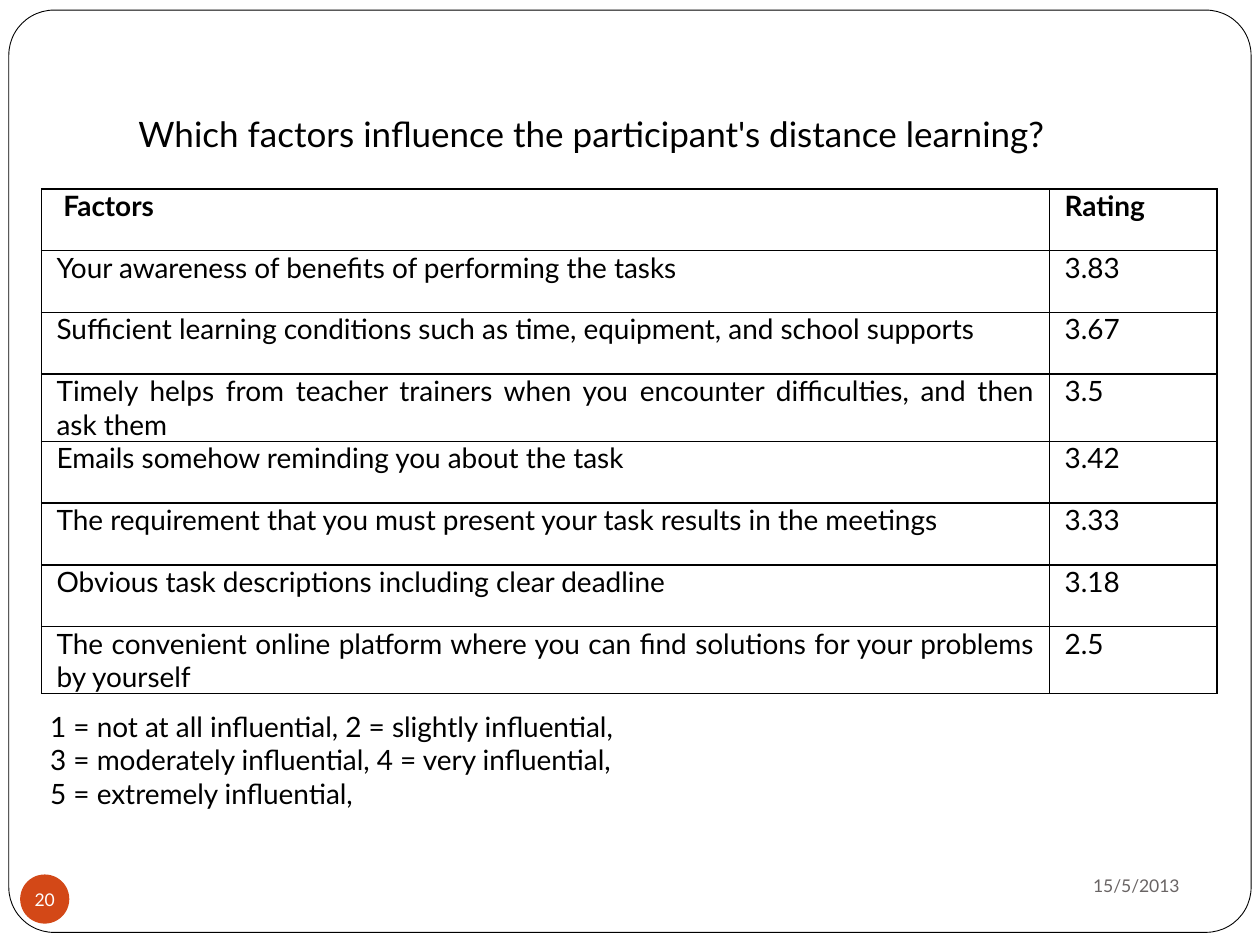
from dataclasses import dataclass

from lxml import etree
from pptx import Presentation
from pptx.dml.color import RGBColor
from pptx.enum.shapes import MSO_SHAPE
from pptx.enum.text import MSO_ANCHOR, PP_ALIGN
from pptx.oxml.ns import qn
from pptx.slide import Slide
from pptx.util import Inches, Pt

ROUNDED, OVAL = MSO_SHAPE.ROUNDED_RECTANGLE, MSO_SHAPE.OVAL
TOP, MIDDLE, BOTTOM = MSO_ANCHOR.TOP, MSO_ANCHOR.MIDDLE, MSO_ANCHOR.BOTTOM
LEFT, CENTER, RIGHT, JUSTIFY = PP_ALIGN.LEFT, PP_ALIGN.CENTER, PP_ALIGN.RIGHT, PP_ALIGN.JUSTIFY

COLORS = {"text": "000000", "paper": "FFFFFF", "muted": "696464", "accent": "D34817"}

FACTORS = [
    (" Factors", "Rating"),
    ("Your awareness of benefits of performing the tasks", "3.83"),
    ("Sufficient learning conditions such as time, equipment, and school supports", "3.67"),
    ("Timely helps from teacher trainers when you encounter difficulties, and then ask them", "3.5"),
    ("Emails somehow reminding you about the task", "3.42"),
    ("The requirement that you must present your task results in the meetings", "3.33"),
    ("Obvious task descriptions including clear deadline", "3.18"),
    ("The convenient online platform where you can find solutions for your problems by yourself", "2.5"),
]
SCALE = [
    "1 = not at all influential, 2 = slightly influential,",
    "3 = moderately influential, 4 = very influential,",
    "5 = extremely influential,",
]


@dataclass
class SlideBuilder:
    """Draws styled elements on the current slide."""

    slide: Slide
    font: str = "Lato"

    def add_lines(self, frame, lines, size, color="text", align=LEFT, bold=False):
        for index, line in enumerate(lines):
            para = frame.add_paragraph() if index else frame.paragraphs[0]
            para.alignment = align
            span = para.add_run()
            span.text = line
            span.font.name = self.font
            span.font.size = Pt(size)
            span.font.bold = bold
            span.font.color.rgb = RGBColor.from_string(COLORS[color])

    def text(self, place, lines, size, anchor=TOP, bottom=0.05, **style):
        frame = self.slide.shapes.add_textbox(*map(Inches, place)).text_frame
        frame.word_wrap = True
        frame.vertical_anchor = anchor
        frame.margin_bottom = Inches(bottom)
        self.add_lines(frame, lines, size, **style)

    def shape(self, kind, place, fill, line=None):
        shape = self.slide.shapes.add_shape(kind, *map(Inches, place))
        shape.shadow.inherit = False
        shape.fill.solid()
        shape.fill.fore_color.rgb = RGBColor.from_string(COLORS[fill])
        if line:
            shape.line.color.rgb = RGBColor.from_string(COLORS[line])
            shape.line.width = Pt(0.5)
        else:
            shape.line.fill.background()
        return shape

    def frame(self, place, rounding):
        self.shape(ROUNDED, place, "paper", "text").adjustments[0] = rounding

    def badge(self, place, label):
        frame = self.shape(OVAL, place, "accent").text_frame
        frame.margin_left = frame.margin_right = frame.margin_top = frame.margin_bottom = 0
        frame.word_wrap = False
        frame.vertical_anchor = MIDDLE
        self.add_lines(frame, [label], 10, "paper", CENTER)

    def borders(self, cell):
        properties = cell._tc.get_or_add_tcPr()
        for index, side in enumerate(("lnL", "lnR", "lnT", "lnB")):
            line = etree.Element(qn(f"a:{side}"), w=str(Pt(1)))
            fill = etree.SubElement(line, qn("a:solidFill"))
            etree.SubElement(fill, qn("a:srgbClr"), val=COLORS["text"])
            properties.insert(index, line)

    def table(self, place, widths, rows, size):
        table = self.slide.shapes.add_table(len(rows), len(widths), *map(Inches, place)).table
        for column, width in zip(table.columns, widths):
            column.width = Inches(width)
        for row_index, row in enumerate(rows):
            table.rows[row_index].height = Inches(0.49)
            for column_index, value in enumerate(row):
                cell = table.cell(row_index, column_index)
                cell.fill.background()
                cell.margin_left = cell.margin_right = Inches(0.12)
                cell.margin_top = cell.margin_bottom = 0
                self.add_lines(cell.text_frame, [value], size, align=JUSTIFY, bold=row_index == 0)
                self.borders(cell)


def main():
    deck = Presentation()
    deck.slide_width, deck.slide_height = Inches(10), Inches(7.5)
    page = SlideBuilder(deck.slides.add_slide(deck.slide_layouts[6]))
    page.frame((0.07, 0.08, 9.86, 7.32), 0.049)
    page.text((1, 0.08, 8.5, 1.25), ["Which factors influence the participant's distance learning?"],
              20, BOTTOM, 0.1)
    page.text((6.75, 6.77, 2.71, 0.52), ["15/5/2013"], 10, MIDDLE, color="muted", align=RIGHT)
    page.badge((0.16, 6.94, 0.39, 0.39), "20")
    page.table((0.33, 1.5, 9.33, 4), (8, 1.33), FACTORS, 16)
    page.text((0.3, 5.58, 9.33, 0.91), SCALE, 16)
    deck.save("out.pptx")


if __name__ == "__main__":
    main()
